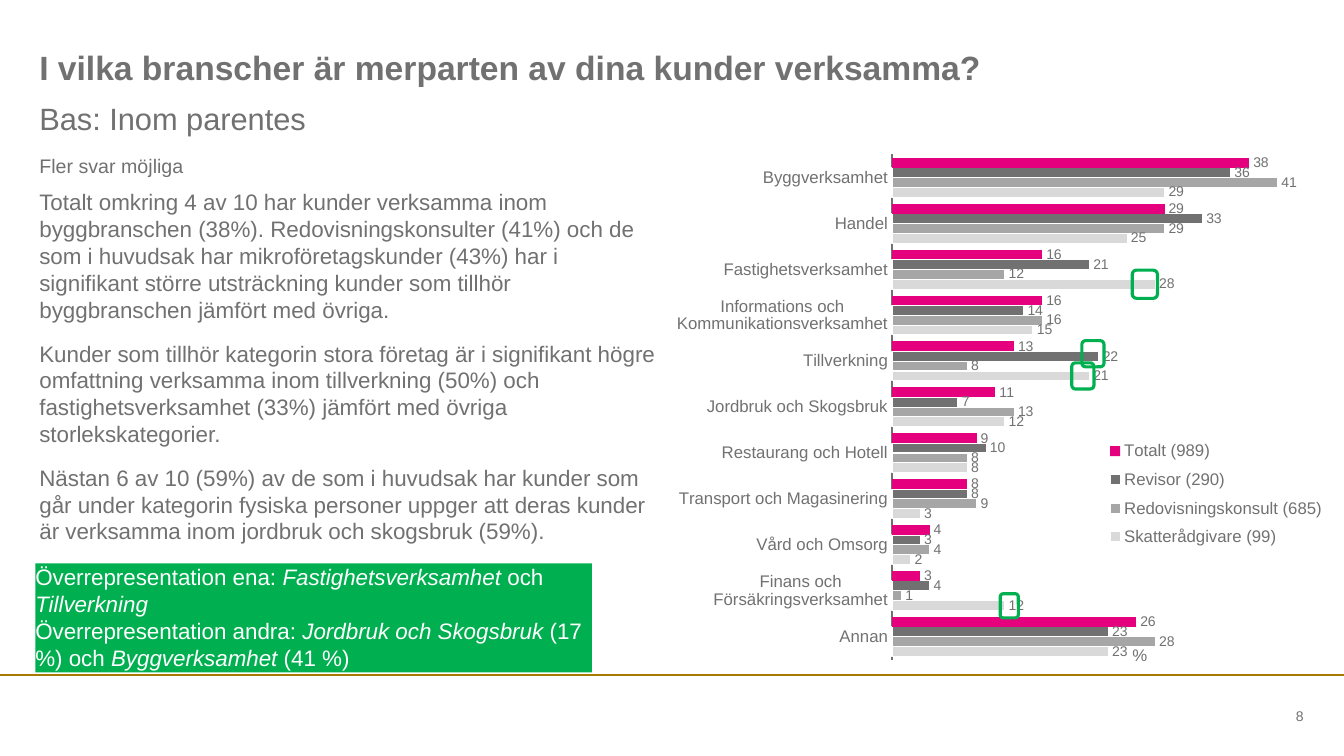
from dataclasses import dataclass
from lxml.etree import SubElement
from pptx import Presentation
from pptx.chart.data import CategoryChartData
from pptx.dml.color import RGBColor
from pptx.enum.chart import XL_CHART_TYPE, XL_LABEL_POSITION, XL_LEGEND_POSITION, XL_TICK_MARK
from pptx.enum.shapes import MSO_CONNECTOR, MSO_SHAPE
from pptx.enum.text import MSO_ANCHOR, MSO_AUTO_SIZE, PP_ALIGN
from pptx.oxml import parse_xml
from pptx.oxml.ns import nsdecls, qn
from pptx.util import Inches, Pt


@dataclass(frozen=True)
class Theme:
    font: str = "Arial"
    grey: RGBColor = RGBColor(0x71, 0x71, 0x71)
    white: RGBColor = RGBColor(0xFF, 0xFF, 0xFF)
    green: RGBColor = RGBColor(0x00, 0xB0, 0x50)
    gold: RGBColor = RGBColor(0xA6, 0x7A, 0x00)
    pink: RGBColor = RGBColor(0xE5, 0x00, 0x7E)
    middle_grey: RGBColor = RGBColor(0xA6, 0xA6, 0xA6)
    light_grey: RGBColor = RGBColor(0xD9, 0xD9, 0xD9)
    title: int = 24
    subtitle: int = 22
    body: int = 16
    note: int = 14
    label: int = 12
    small: int = 10


theme = Theme()


def write(box, text, size=theme.body, color=theme.grey, bold=False, italics=(),
          align=PP_ALIGN.LEFT, anchor=MSO_ANCHOR.TOP, before=0, sizes=None):
    frame = box.text_frame
    frame.word_wrap = True
    frame.auto_size = MSO_AUTO_SIZE.NONE
    frame.vertical_anchor = anchor
    frame.margin_left = frame.margin_top = frame.margin_right = frame.margin_bottom = 0
    for number, line in enumerate(text.split("\n")):
        para = frame.add_paragraph() if number else frame.paragraphs[0]
        properties = para._p.get_or_add_pPr()
        properties.set("marL", "0")
        properties.set("indent", "0")
        SubElement(properties, qn("a:buNone"))
        para.alignment = align
        para.space_before = Pt(before if number else 0)
        for position, part in enumerate(line.split("|")):
            span = para.add_run()
            span.text = part
            span.font.name = theme.font
            span.font.size = Pt(sizes[number] if sizes else size)
            span.font.bold = bold
            span.font.italic = position in italics
            span.font.color.rgb = color


def place(box, left, top, width, height):
    box.left, box.top = Inches(left), Inches(top)
    box.width, box.height = Inches(width), Inches(height)


deck = Presentation()
deck.slide_width, deck.slide_height = Inches(13.33), Inches(7.5)
page = deck.slides.add_slide(deck.slide_layouts[3])

rule = page.shapes.add_connector(MSO_CONNECTOR.STRAIGHT, 0, Inches(6.7), Inches(13.33), Inches(6.7))
rule.line.color.rgb = theme.gold
rule.line.width = Pt(1.5)
SubElement(rule._element.spPr, qn("a:effectLst"))

title, subtitle, body = page.placeholders
place(title, 0.39, 0.47, 12.54, 0.44)
write(title, "I vilka branscher är merparten av dina kunder verksamma?", size=theme.title, bold=True)
place(subtitle, 0.39, 0.99, 12.55, 0.43)
write(subtitle, "Bas: Inom parentes\nFler svar möjliga", sizes=(theme.subtitle, theme.note), before=12)
place(body, 0.39, 1.87, 6.15, 4.38)
write(body, "Totalt omkring 4 av 10 har kunder verksamma inom byggbranschen (38%). "
      "Redovisningskonsulter (41%) och de som i huvudsak har mikroföretagskunder (43%) har i "
      "signifikant större utsträckning kunder som tillhör byggbranschen jämfört med övriga.\n"
      "Kunder som tillhör kategorin stora företag är i signifikant högre omfattning verksamma "
      "inom tillverkning (50%) och fastighetsverksamhet (33%) jämfört med övriga storlekskategorier.\n"
      "Nästan 6 av 10 (59%) av de som i huvudsak har kunder som går under kategorin fysiska "
      "personer uppger att deras kunder är verksamma inom jordbruk och skogsbruk (59%).", before=12)

page_number = page.shapes.add_textbox(Inches(11.87), Inches(6.99), Inches(1.06), Inches(0.22))
write(page_number, "8", size=theme.small, align=PP_ALIGN.RIGHT, anchor=MSO_ANCHOR.MIDDLE)

data = CategoryChartData()
data.categories = [
    "Annan", "Finans och\nFörsäkringsverksamhet", "Vård och Omsorg", "Transport och Magasinering",
    "Restaurang och Hotell", "Jordbruk och Skogsbruk", "Tillverkning",
    "Informations och\nKommunikationsverksamhet", "Fastighetsverksamhet", "Handel", "Byggverksamhet"]
groups = [
    ("Skatterådgivare (99)", theme.light_grey, (23, 12, 2, 3, 8, 12, 21, 15, 28, 25, 29)),
    ("Redovisningskonsult (685)", theme.middle_grey, (28, 1, 4, 9, 8, 13, 8, 16, 12, 29, 41)),
    ("Revisor (290)", theme.grey, (23, 4, 3, 8, 10, 7, 22, 14, 21, 33, 36)),
    ("Totalt (989)", theme.pink, (26, 3, 4, 8, 9, 11, 13, 16, 16, 29, 38))]
for name, color, values in groups:
    data.add_series(name, values)
chart = page.shapes.add_chart(XL_CHART_TYPE.BAR_CLUSTERED, Inches(6.41), Inches(1.21),
                              Inches(6.77), Inches(5.39), data).chart
chart.has_title = False
chart.font.name = theme.font
chart.font.size = Pt(theme.small)
chart.font.color.rgb = theme.grey

bars = chart.plots[0]
bars.gap_width = 66
bars.overlap = 0
bars.vary_by_categories = False
for series, (name, color, values) in zip(bars.series, groups):
    series.format.fill.solid()
    series.format.fill.fore_color.rgb = color
    if color != theme.pink:
        series.format.line.color.rgb = theme.white
        series.format.line.width = Pt(0.75)
    series.data_labels.show_value = True
    series.data_labels.position = XL_LABEL_POSITION.OUTSIDE_END

industries = chart.category_axis
industries.major_tick_mark = industries.minor_tick_mark = XL_TICK_MARK.NONE
industries.format.line.color.rgb = theme.grey
industries.format.line.width = Pt(0.75)
shares = chart.value_axis
shares.minimum_scale, shares.maximum_scale = 0, 45
shares.has_major_gridlines = False
shares.visible = False

chart.has_legend = True
legend = chart.legend
legend.position = XL_LEGEND_POSITION.RIGHT
legend.include_in_layout = False
for font in (industries.tick_labels.font, legend.font):
    font.name = theme.font
    font.size = Pt(theme.label)
    font.color.rgb = theme.grey

plot_area = chart._chartSpace.chart.plotArea
for old in plot_area.findall(qn("c:layout")) + legend._element.findall(qn("c:layout")):
    old.getparent().remove(old)
for parent, index, target, frame in (
        (plot_area, 0, '<c:layoutTarget val="inner"/>', (0.36, 0.06, 0.62, 0.93)),
        (legend._element, 1, "", (0.67, 0.57, 0.33, 0.23))):
    modes = '<c:xMode val="edge"/><c:yMode val="edge"/>'
    sides = "".join(f'<c:{side} val="{value}"/>' for side, value in zip("xywh", frame))
    parent.insert(index, parse_xml(
        f'<c:layout {nsdecls("c")}><c:manualLayout>{target}{modes}{sides}</c:manualLayout></c:layout>'))

unit = page.shapes.add_textbox(Inches(11.23), Inches(6.4), Inches(0.51), Inches(0.2))
write(unit, "%", size=theme.label)

summary = page.shapes.add_shape(MSO_SHAPE.RECTANGLE, Inches(0.35), Inches(5.59), Inches(5.52), Inches(1.08))
summary.shadow.inherit = False
summary.fill.solid()
summary.fill.fore_color.rgb = theme.green
summary.line.fill.background()
write(summary, "Överrepresentation ena: |Fastighetsverksamhet |och |Tillverkning\n"
      "Överrepresentation andra: |Jordbruk och Skogsbruk |(17 %) och |Byggverksamhet |(41 %)",
      color=theme.white, italics=(1, 3))

for left, top, width, height in ((11.23, 2.68, 0.25, 0.28), (10.73, 3.38, 0.22, 0.26),
                                 (10.63, 3.6, 0.22, 0.26), (9.92, 5.89, 0.18, 0.24)):
    marker = page.shapes.add_shape(MSO_SHAPE.ROUNDED_RECTANGLE, Inches(left), Inches(top),
                                   Inches(width), Inches(height))
    marker.shadow.inherit = False
    marker.fill.background()
    marker.line.color.rgb = theme.green
    marker.line.width = Pt(2.25)

deck.save("out.pptx")
